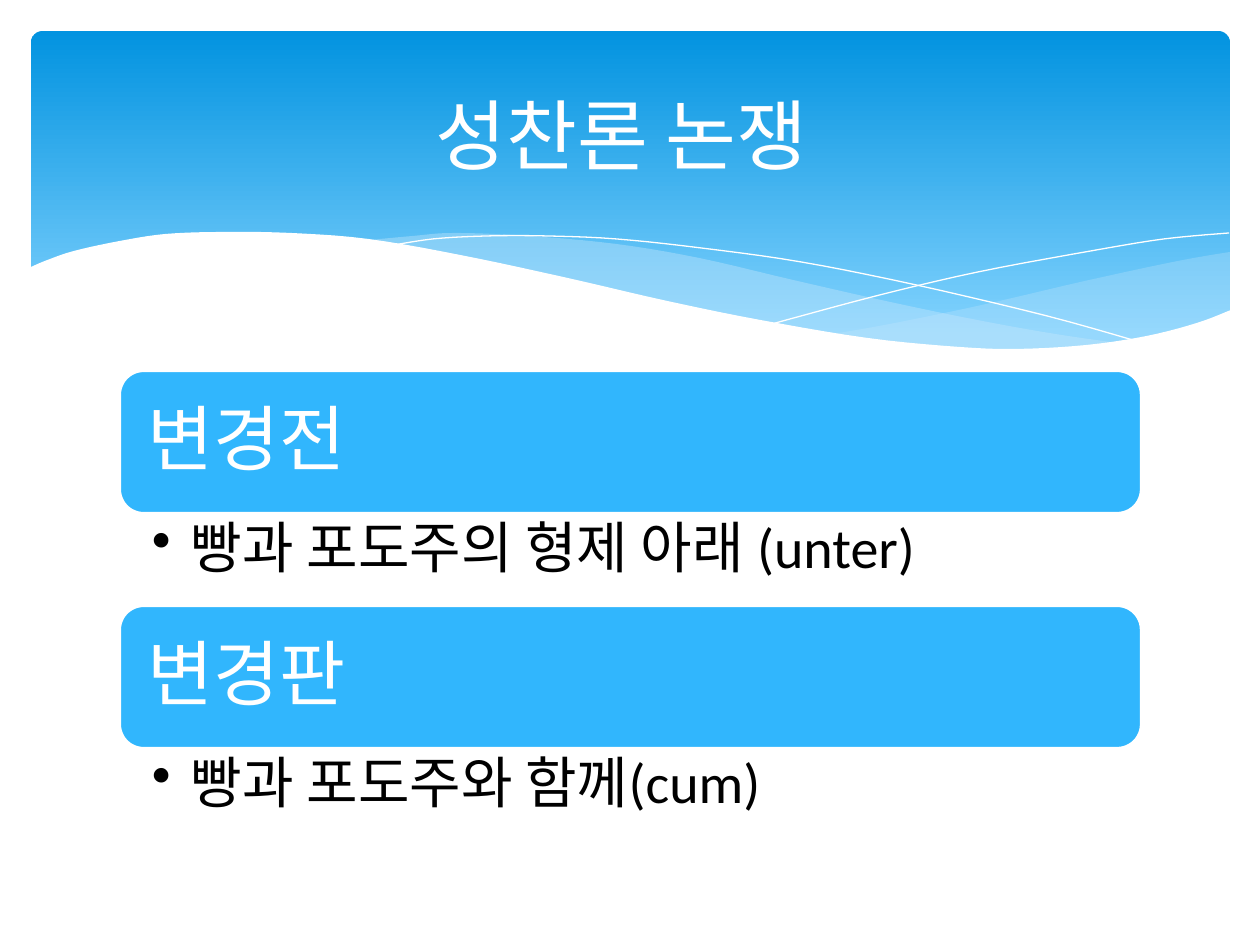
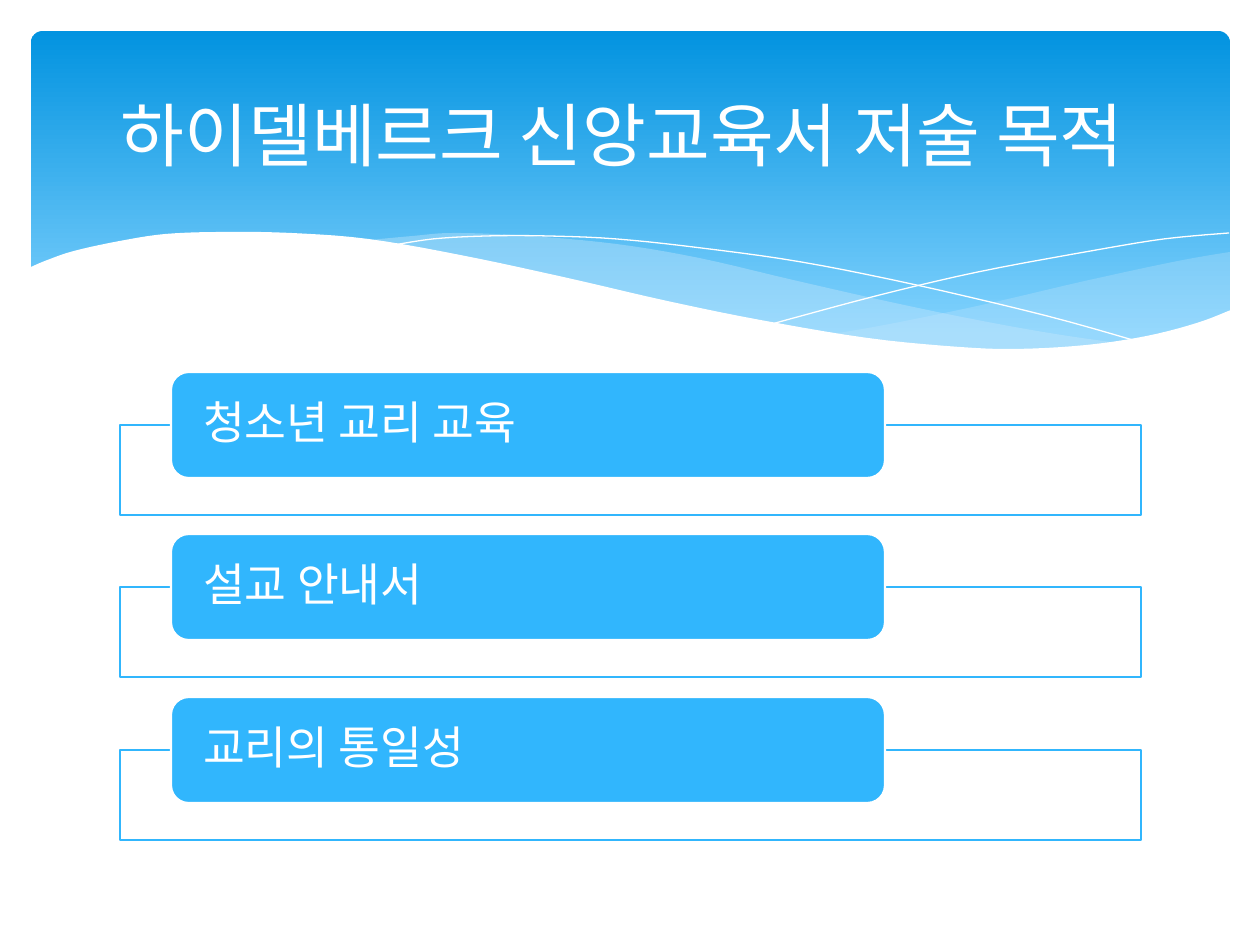
from lxml import etree
from pptx import Presentation
from pptx.dml.color import RGBColor
from pptx.enum.shapes import MSO_SHAPE as Shape
from pptx.enum.text import MSO_ANCHOR as Anchor, PP_ALIGN as Align
from pptx.oxml.ns import qn
from pptx.util import Emu, Pt

# Scale: 126 px to the inch
EMU_PER_PX = 914400 / 126
SLIDE_WIDTH, SLIDE_HEIGHT = 1260, 945

# Colours and font
WHITE = RGBColor(0xFF, 0xFF, 0xFF)
BLACK = RGBColor(0x00, 0x00, 0x00)
SKY = RGBColor(0x31, 0xB6, 0xFD)
BAND_TOP = RGBColor(0x02, 0x93, 0xE0)
BAND_BOTTOM = RGBColor(0x83, 0xD3, 0xFE)
MIST = RGBColor(0xC6, 0xE7, 0xFC)
FONT = "Calibri"

# Content column shared by both slides
LEFT, WIDTH = 120, 1021

# Wave edges as knots of a smooth curve
RIGHT_WAVE_TOP = [(1230, 252), (1178, 261), (1085, 281), (982, 305), (890, 324), (833, 334)]
RIGHT_WAVE_BOTTOM = [(833, 334), (906, 343), (984, 349), (1052, 349), (1120, 343),
                     (1178, 330), (1230, 311)]
LEFT_WAVE_TOP = [(360, 241), (413, 236), (455, 233), (529, 236), (616, 244), (699, 258),
                 (793, 280), (890, 302), (977, 320), (1055, 334), (1125, 344)]
LEFT_WAVE_BOTTOM = [(1125, 344), (1056, 350), (989, 350), (910, 345), (819, 333),
                    (713, 312), (566, 280), (483, 261), (407, 247), (360, 241)]
FALLING_LINE = [(389, 246), (433, 239), (488, 236), (546, 236), (616, 239), (701, 248),
                (801, 262), (916, 285), (1047, 316), (1143, 343)]
RISING_LINE = [(772, 324), (876, 296), (978, 272), (1091, 251), (1164, 239), (1229, 233)]
FRONT_WAVE = [(29, 268), (45, 261), (74, 251), (120, 241), (166, 234), (223, 232),
              (290, 233), (368, 239), (460, 255), (563, 277), (667, 301), (760, 320),
              (867, 338), (959, 347), (1019, 349), (1087, 345), (1147, 336),
              (1197, 323), (1231, 310)]


def px(length):
    return Emu(round(length * EMU_PER_PX))


def smooth(knots, steps=5):
    """Catmull-Rom curve through the knots."""
    padded = [knots[0], *knots, knots[-1]]
    curve = [knots[0]]
    for a, b, c, d in zip(padded, padded[1:], padded[2:], padded[3:]):
        for step in range(1, steps + 1):
            t = step / steps
            curve.append(tuple(
                (2 * q + (r - p) * t + (2 * p - 5 * q + 4 * r - s) * t ** 2
                 + (3 * q - p - 3 * r + s) * t ** 3) / 2
                for p, q, r, s in zip(a, b, c, d)))
    return curve


def paint(shape, fill=None, alpha=100, line=None, line_width=1.25):
    shape.shadow.inherit = False
    if fill is None:
        shape.fill.background()
    else:
        shape.fill.solid()
        shape.fill.fore_color.rgb = fill
    if alpha < 100:
        color = shape._element.spPr.find(qn("a:solidFill"))[0]
        etree.SubElement(color, qn("a:alpha"), val=str(alpha * 1000))
    if line is None:
        shape.line.fill.background()
    else:
        shape.line.color.rgb = line
        shape.line.width = Pt(line_width)


def add_box(slide, kind, left, top, width, height, **look):
    shape = slide.shapes.add_shape(kind, px(left), px(top), px(width), px(height))
    paint(shape, **look)
    return shape


def add_curve(slide, points, closed=True, **look):
    start, *rest = [(px(x), px(y)) for x, y in points]
    builder = slide.shapes.build_freeform(*start, scale=1.0)
    builder.add_line_segments(rest, close=closed)
    paint(builder.convert_to_shape(), **look)


def write(shape, text, size, color=WHITE, align=Align.LEFT, anchor=Anchor.MIDDLE,
          insets=(13, 6, 13, 6), line_spacing=0.9, bullet_indent=0):
    frame = shape.text_frame
    frame.word_wrap = True
    frame.vertical_anchor = anchor
    (frame.margin_left, frame.margin_top,
     frame.margin_right, frame.margin_bottom) = map(px, insets)
    paragraph = frame.paragraphs[0]
    paragraph.alignment = align
    paragraph.line_spacing = line_spacing
    if bullet_indent:
        properties = paragraph._p.get_or_add_pPr()
        properties.set("marL", str(px(bullet_indent)))
        properties.set("indent", str(-px(bullet_indent)))
        etree.SubElement(properties, qn("a:buChar"), char="•")
    run = paragraph.add_run()
    run.text = text
    run.font.name = FONT
    run.font.size = Pt(size)
    run.font.color.rgb = color


def add_text(slide, text, left, top, width, height, **text_format):
    box = slide.shapes.add_textbox(px(left), px(top), px(width), px(height))
    write(box, text, **text_format)


def add_header(slide):
    # Gradient band
    band = add_box(slide, Shape.ROUNDED_RECTANGLE, 31, 31, 1199, 340)
    band.adjustments[0] = 0.034
    band.fill.gradient()
    band.fill.gradient_angle = 270
    stops = zip(band.fill.gradient_stops, (0, 0.9), (BAND_TOP, BAND_BOTTOM))
    for stop, position, color in stops:
        stop.position = position
        stop.color.rgb = color
    # Waves and hairlines
    add_curve(slide, smooth(RIGHT_WAVE_TOP) + smooth(RIGHT_WAVE_BOTTOM), fill=MIST, alpha=29)
    add_curve(slide, smooth(LEFT_WAVE_TOP) + smooth(LEFT_WAVE_BOTTOM), fill=MIST, alpha=40)
    for knots in (FALLING_LINE, RISING_LINE):
        add_curve(slide, smooth(knots), closed=False, line=WHITE, line_width=0)
    add_curve(slide, smooth(FRONT_WAVE) + [(1231, 415), (29, 415)], fill=WHITE)


def add_pill(slide, text, left, top, width, height, **text_format):
    pill = add_box(slide, Shape.ROUNDED_RECTANGLE, left, top, width, height,
                   fill=SKY, line=WHITE)
    write(pill, text, **text_format)


def add_slide(presentation, title, title_size):
    slide = presentation.slides.add_slide(presentation.slide_layouts[6])
    add_header(slide)
    add_text(slide, title, 63, 47, 1134, 173, size=title_size,
             align=Align.CENTER, line_spacing=1.0)
    return slide


def add_headed_bullets(slide, items):
    pill_height, bullet_height = 142, 93
    for index, (heading, bullet) in enumerate(items):
        top = 371 + index * (pill_height + bullet_height)
        add_pill(slide, heading, LEFT, top, WIDTH, pill_height,
                 size=41, insets=(21, 21, 21, 21))
        add_text(slide, bullet, LEFT, top + pill_height, WIDTH, bullet_height,
                 size=32, color=BLACK, anchor=Anchor.TOP,
                 insets=(32, 7, 40, 7), bullet_indent=39)


def add_framed_list(slide, items):
    for index, text in enumerate(items):
        top = 425 + index * 325 // 2
        add_box(slide, Shape.RECTANGLE, LEFT, top, WIDTH, 90,
                fill=WHITE, alpha=90, line=SKY)
        add_pill(slide, text, LEFT + 51, top - 53, 714, 106,
                 size=26, insets=(27, 0, 27, 0))


def main():
    presentation = Presentation()
    presentation.slide_width = px(SLIDE_WIDTH)
    presentation.slide_height = px(SLIDE_HEIGHT)

    # Slide 1: wording before and after the change
    slide = add_slide(presentation, "성찬론 논쟁 ", 44)
    add_headed_bullets(slide, [
        ("변경전", "빵과 포도주의 형제 아래 (unter)"),
        ("변경판", "빵과 포도주와 함께(cum)"),
    ])

    # Slide 2: purposes of the catechism
    slide = add_slide(presentation, "하이델베르크 신앙교육서 저술 목적 ", 39.6)
    add_framed_list(slide, ["청소년 교리 교육", "설교 안내서", "교리의 통일성"])

    presentation.save("out.pptx")


if __name__ == "__main__":
    main()
